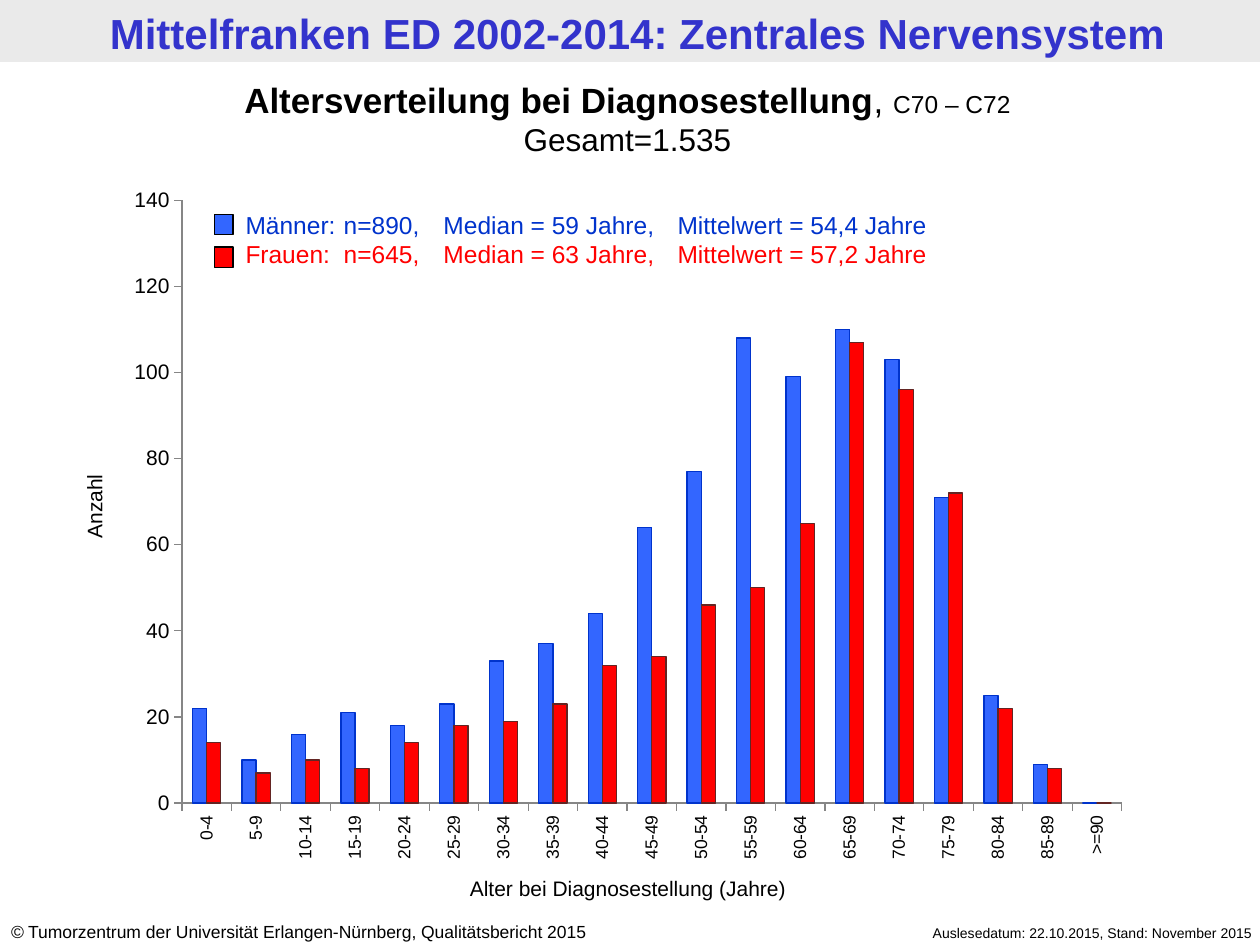
import pptx
import pptx.chart.data
import pptx.dml.color
import pptx.enum.chart
import pptx.enum.shapes
import pptx.enum.text
import pptx.oxml
import pptx.oxml.ns
import pptx.util

Cm, Pt = pptx.util.Cm, pptx.util.Pt
RGBColor = pptx.dml.color.RGBColor
ALIGN = pptx.enum.text.PP_ALIGN

BLACK = RGBColor(0x00, 0x00, 0x00)
WHITE = RGBColor(0xFF, 0xFF, 0xFF)
BAND_GREY = RGBColor(0xEA, 0xEA, 0xEA)
AXIS_GREY = RGBColor(0x86, 0x86, 0x86)
HEADING_BLUE = RGBColor(0x33, 0x33, 0xCC)
MEN_FILL = RGBColor(0x33, 0x66, 0xFF)
MEN_LINE = RGBColor(0x00, 0x33, 0xCC)
WOMEN_FILL = RGBColor(0xFF, 0x00, 0x00)
WOMEN_LINE = RGBColor(0x63, 0x25, 0x23)

deck = pptx.Presentation()
deck.slide_width, deck.slide_height = Cm(25.4), Cm(19.05)
page = deck.slides.add_slide(deck.slide_layouts[6])


def add_text(place, paragraphs, align=ALIGN.LEFT, tabs=()):
    """Add a text box; each paragraph is a list of (text, size, extra font values)."""
    box = page.shapes.add_textbox(*[Cm(length) for length in place])
    frame = box.text_frame
    frame.word_wrap = True
    for index, spans in enumerate(paragraphs):
        para = frame.paragraphs[0] if index == 0 else frame.add_paragraph()
        para.alignment = align
        if tabs:
            stops = "".join(f'<a:tab pos="{Cm(stop)}" algn="l"/>' for stop in tabs)
            para._p.get_or_add_pPr().append(pptx.oxml.parse_xml(
                f'<a:tabLst {pptx.oxml.ns.nsdecls("a")}>{stops}</a:tabLst>'))
        for text, size, extra in spans:
            span = para.add_run()
            span.text = text
            values = {"name": "Arial", "size": Pt(size), "color": BLACK} | extra
            span.font.color.rgb = values.pop("color")
            for key, value in values.items():
                setattr(span.font, key, value)
    return box


def add_rectangle(place, fill, line=None):
    box = page.shapes.add_shape(pptx.enum.shapes.MSO_SHAPE.RECTANGLE,
                                *[Cm(length) for length in place])
    box.shadow.inherit = False
    box.fill.solid()
    box.fill.fore_color.rgb = fill
    if line is None:
        box.line.fill.background()
    else:
        box.line.color.rgb = line
        box.line.width = Pt(0.75)


# Header and footer
add_rectangle((0, 0, 25.4, 1.25), BAND_GREY)
add_text((0.15, 0.03, 25.4, 1.24),
         [[("Mittelfranken ED 2002-2014: Zentrales Nervensystem", 24,
            {"bold": True, "color": HEADING_BLUE})]], ALIGN.CENTER)
add_text((16.89, 18.52, 8.61, 0.61),
         [[("Auslesedatum: 22.10.2015, Stand: November 2015", 8, {})]], ALIGN.RIGHT)
add_text((-0.03, 18.44, 13.31, 0.69),
         [[("©", 10, {"italic": True}),
           (" Tumorzentrum der Universität Erlangen-Nürnberg, Qualitätsbericht 2015", 10, {})]])

# Age distribution chart
ages = [f"{start}-{start + 4}" for start in range(0, 90, 5)] + [">=90"]
men = [22, 10, 16, 21, 18, 23, 33, 37, 44, 64, 77, 108, 99, 110, 103, 71, 25, 9, 0]
women = [14, 7, 10, 8, 14, 18, 19, 23, 32, 34, 46, 50, 65, 107, 96, 72, 22, 8, 0]
data = pptx.chart.data.CategoryChartData()
data.categories = ages
data.add_series("Männer", men)
data.add_series("Frauen", women)
chart = page.shapes.add_chart(
    pptx.enum.chart.XL_CHART_TYPE.COLUMN_CLUSTERED,
    Cm(2.31), Cm(3.53), Cm(20.73), Cm(14.1), data).chart
chart.has_legend = False
chart.has_title = False
chart.font.name, chart.font.size = "Calibri", Pt(18)
chart.font.color.rgb = BLACK

plot = chart.plots[0]
plot.gap_width, plot.overlap = 150, 0
plot.vary_by_categories = False
for series, fill, line in zip(plot.series, (MEN_FILL, WOMEN_FILL), (MEN_LINE, WOMEN_LINE)):
    series.format.fill.solid()
    series.format.fill.fore_color.rgb = fill
    series.format.line.color.rgb = line
    series.format.line.width = Pt(0.75)

for axis, size in ((chart.category_axis, 10), (chart.value_axis, 12)):
    axis.has_major_gridlines = False
    axis.major_tick_mark = pptx.enum.chart.XL_TICK_MARK.OUTSIDE
    axis.format.line.color.rgb = AXIS_GREY
    axis.format.line.width = Pt(0.75)
    font = axis.tick_labels.font
    font.name, font.size = "Arial", Pt(size)
    font.color.rgb = BLACK
for key, value in {"minimum_scale": 0, "maximum_scale": 140, "major_unit": 20}.items():
    setattr(chart.value_axis, key, value)
label_body = chart.category_axis._element.txPr.bodyPr
label_body.set("rot", "-5400000")
label_body.set("vert", "horz")

plot_area = chart._chartSpace.chart.plotArea
for layout in plot_area.findall(pptx.oxml.ns.qn("c:layout")):
    plot_area.remove(layout)
plot_area.insert(0, pptx.oxml.parse_xml(
    f'<c:layout {pptx.oxml.ns.nsdecls("c")}><c:manualLayout>'
    '<c:layoutTarget val="inner"/><c:xMode val="edge"/><c:yMode val="edge"/>'
    '<c:x val="0.0655"/><c:y val="0.036"/><c:w val="0.914"/><c:h val="0.862"/>'
    '</c:manualLayout></c:layout>'))
plot_area.append(pptx.oxml.parse_xml(
    f'<c:spPr {pptx.oxml.ns.nsdecls("c", "a")}><a:solidFill>'
    f'<a:srgbClr val="{WHITE}"/></a:solidFill></c:spPr>'))

# Chart title, legend and axis titles
add_text((-0.1, 1.45, 25.5, 1.88),
         [[("Altersverteilung bei Diagnosestellung", 20, {"bold": True}),
           (", ", 20, {}), ("C70 – C72", 14, {})],
          [("Gesamt=1.535", 18, {})]], ALIGN.CENTER)
add_text((4.7, 4.11, 17.4, 1.45),
         [[("Männer: \tn=890, \tMedian = 59 Jahre, \tMittelwert = 54,4 Jahre", 14,
            {"color": MEN_LINE})],
          [("Frauen: \tn=645, \tMedian = 63 Jahre,\tMittelwert = 57,2 Jahre", 14,
            {"color": WOMEN_FILL})]], tabs=(1.98, 3.99, 8.71))
for top, fill in ((4.32, MEN_FILL), (4.98, WOMEN_FILL)):
    add_rectangle((4.32, top, 0.38, 0.41), fill, BLACK)
add_text((8.76, 17.53, 7.8, 0.76),
         [[("Alter bei Diagnosestellung (Jahre)", 12, {})]], ALIGN.CENTER)
count_title = add_text((-1.42, 9.83, 6.63, 0.76), [[("Anzahl", 12, {})]], ALIGN.CENTER)
count_title.rotation = 270

deck.save("out.pptx")
